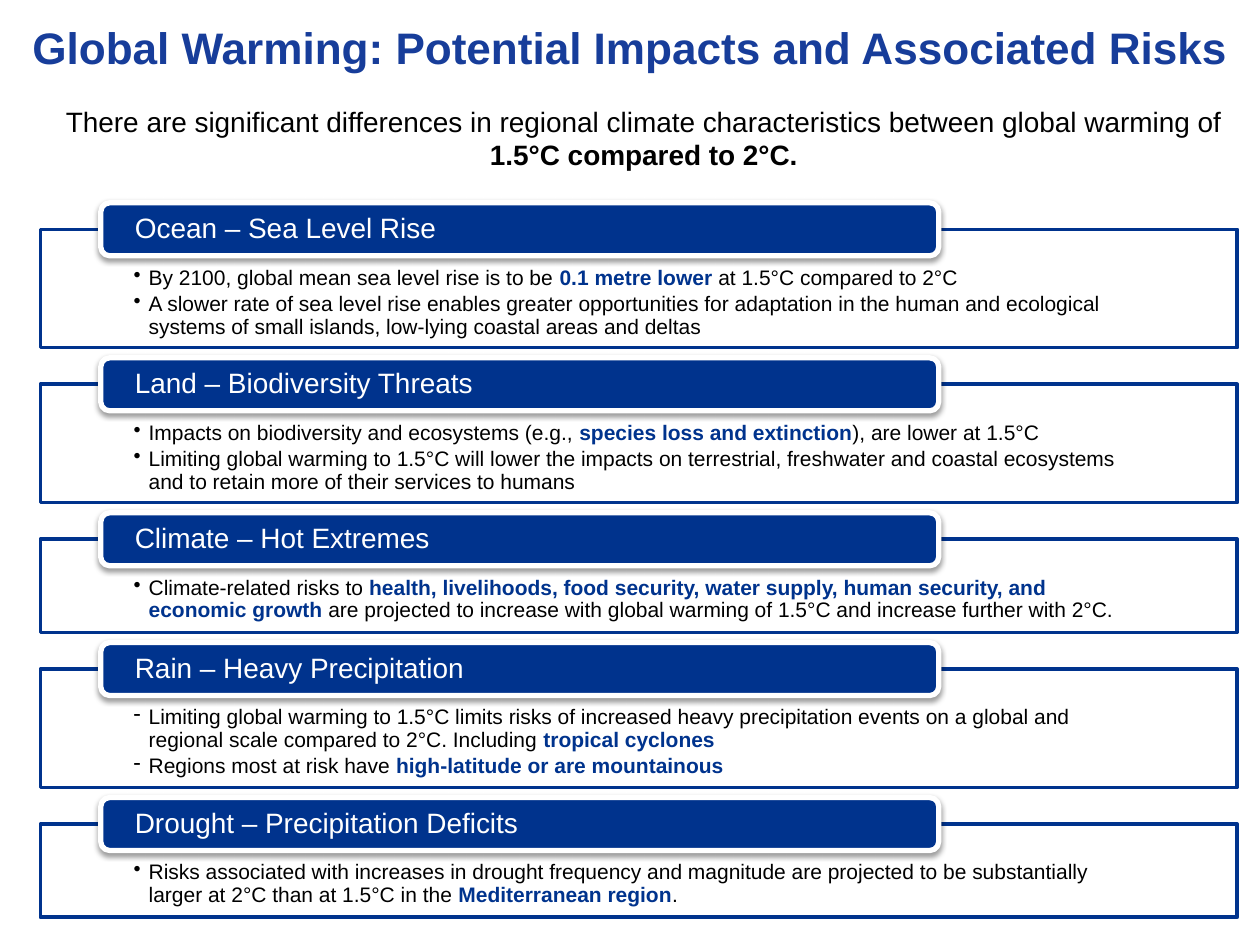
import pptx
import pptx.util
import pptx.dml.color
import pptx.enum.shapes
import pptx.enum.text
import pptx.oxml
import pptx.oxml.ns

Inches, Pt = pptx.util.Inches, pptx.util.Pt
SHAPE = pptx.enum.shapes.MSO_SHAPE
ALIGN = pptx.enum.text.PP_ALIGN
ANCHOR = pptx.enum.text.MSO_ANCHOR
NS = pptx.oxml.ns.nsdecls("a")

NAVY, BLUE, WHITE, BLACK = "00338D", "173D9A", "FFFFFF", "000000"
TITLE = "Global Warming: Potential Impacts and Associated Risks"
INTRO = [
    "There are significant differences in regional climate characteristics between global warming of ",
    "1.5°C compared to 2°C.",
]
# Within each bullet, every second run is emphasised.
SECTIONS = [
    ("Ocean – Sea Level Rise", "•", 0.94, [
        ["By 2100, global mean sea level rise is to be ", "0.1 metre lower ", "at 1.5°C compared to 2°C"],
        ["A slower rate of sea level rise enables greater opportunities for adaptation in the human "
         "and ecological systems of small islands, low-lying coastal areas and deltas"],
    ]),
    ("Land – Biodiversity Threats", "•", 0.94, [
        ["Impacts on biodiversity and ecosystems (e.g., ", "species loss and extinction",
         "), are lower at 1.5°C"],
        ["Limiting global warming to 1.5°C will lower the impacts on terrestrial, freshwater and "
         "coastal ecosystems and to retain more of their services to humans"],
    ]),
    ("Climate – Hot Extremes", "•", 0.74, [
        ["Climate-related risks to ",
         "health, livelihoods, food security, water supply, human security, and economic growth ",
         "are projected to increase with global warming of 1.5°C and increase further with 2°C."],
    ]),
    ("Rain – Heavy Precipitation", "-", 0.94, [
        ["Limiting global warming to 1.5°C limits risks of increased heavy precipitation events on a "
         "global and regional scale compared to 2°C. Including ", "tropical cyclones"],
        ["Regions most at risk have ", "high-latitude or are mountainous"],
    ]),
    ("Drought – Precipitation Deficits", "•", 0.74, [
        ["Risks associated with increases in drought frequency and magnitude are projected to be "
         "substantially larger at 2°C than at 1.5°C in the ", "Mediterranean region", "."],
    ]),
]
LEFT, WIDTH, TOP, GAP = 0.32, 9.5, 1.82, 0.29
TAB_LEFT, TAB_WIDTH, TAB_HEIGHT, TAB_RISE = 0.8, 6.65, 0.42, 0.21


def rgb(value):
    return pptx.dml.color.RGBColor.from_string(value)


def add_run(p, text, size, color, bold=False):
    r = p.add_run()
    r.text = text
    r.font.name = "Arial"
    r.font.size = Pt(size)
    r.font.bold = bold
    r.font.color.rgb = rgb(color)


def set_frame(tf, insets, anchor):
    tf.word_wrap = True
    tf.vertical_anchor = anchor
    tf.margin_left, tf.margin_top, tf.margin_right, tf.margin_bottom = map(Inches, insets)


def add_box(slide, kind, box, fill, line, width):
    sp = slide.shapes.add_shape(kind, *map(Inches, box))
    sp.shadow.inherit = False
    sp.fill.solid()
    sp.fill.fore_color.rgb = rgb(fill)
    sp.line.color.rgb = rgb(line)
    sp.line.width = Pt(width)
    return sp


def add_bullet(p, mark):
    pPr = p._p.get_or_add_pPr()
    pPr.set("marL", str(Inches(0.12)))
    pPr.set("indent", str(-Inches(0.12)))
    pPr.append(pptx.oxml.parse_xml(f'<a:buChar {NS} char="{mark}"/>'))


def add_shadow(sp):
    effects = sp._element.spPr.find(pptx.oxml.ns.qn("a:effectLst"))
    effects.append(pptx.oxml.parse_xml(
        f'<a:outerShdw {NS} blurRad="{Pt(3.1)}" dist="{Pt(1.6)}" dir="5400000" rotWithShape="0">'
        f'<a:srgbClr val="{BLACK}"><a:alpha val="38000"/></a:srgbClr></a:outerShdw>'))


def add_section(slide, top, heading, mark, height, bullets):
    panel = add_box(slide, SHAPE.RECTANGLE, (LEFT, top, WIDTH, height), WHITE, NAVY, 2)
    tf = panel.text_frame
    set_frame(tf, (0.74, 0.3, 0.74, 0.09), ANCHOR.TOP)
    for i, runs in enumerate(bullets):
        p = tf.add_paragraph() if i else tf.paragraphs[0]
        add_bullet(p, mark)
        p.alignment = ALIGN.LEFT
        p.line_spacing = 0.9
        p.space_after = Pt(2)
        for j, text in enumerate(runs):
            strong = j % 2 == 1
            add_run(p, text, 12, NAVY if strong else BLACK, strong)

    tab = add_box(slide, SHAPE.ROUNDED_RECTANGLE,
                  (TAB_LEFT, top - TAB_RISE, TAB_WIDTH, TAB_HEIGHT), NAVY, WHITE, 3)
    add_shadow(tab)
    set_frame(tab.text_frame, (0.25, 0, 0.25, 0), ANCHOR.MIDDLE)
    p = tab.text_frame.paragraphs[0]
    p.alignment = ALIGN.LEFT
    p.line_spacing = 0.9
    add_run(p, heading, 16, WHITE)


def main():
    prs = pptx.Presentation()
    prs.slide_width, prs.slide_height = Inches(10), Inches(7.5)
    slide = prs.slides.add_slide(prs.slide_layouts[5])

    title = slide.shapes.title
    title.left, title.top, title.width, title.height = map(Inches, (0, 0.19, 10, 0.75))
    set_frame(title.text_frame, (0, 0, 0, 0), ANCHOR.TOP)
    p = title.text_frame.paragraphs[0]
    p.alignment = ALIGN.CENTER
    p.line_spacing = 0.95
    add_run(p, TITLE, 25.2, BLUE, True)

    top = TOP
    for heading, mark, height, bullets in SECTIONS:
        add_section(slide, top, heading, mark, height, bullets)
        top += height + GAP

    intro = slide.shapes.add_textbox(*map(Inches, (0.4, 0.78, 9.42, 0.64)))
    set_frame(intro.text_frame, (0.1, 0.05, 0.1, 0.05), ANCHOR.TOP)
    p = intro.text_frame.paragraphs[0]
    p.alignment = ALIGN.CENTER
    p.space_after = Pt(6)
    for text, bold in zip(INTRO, (False, True)):
        add_run(p, text, 16, BLACK, bold)

    prs.save("out.pptx")


if __name__ == "__main__":
    main()
